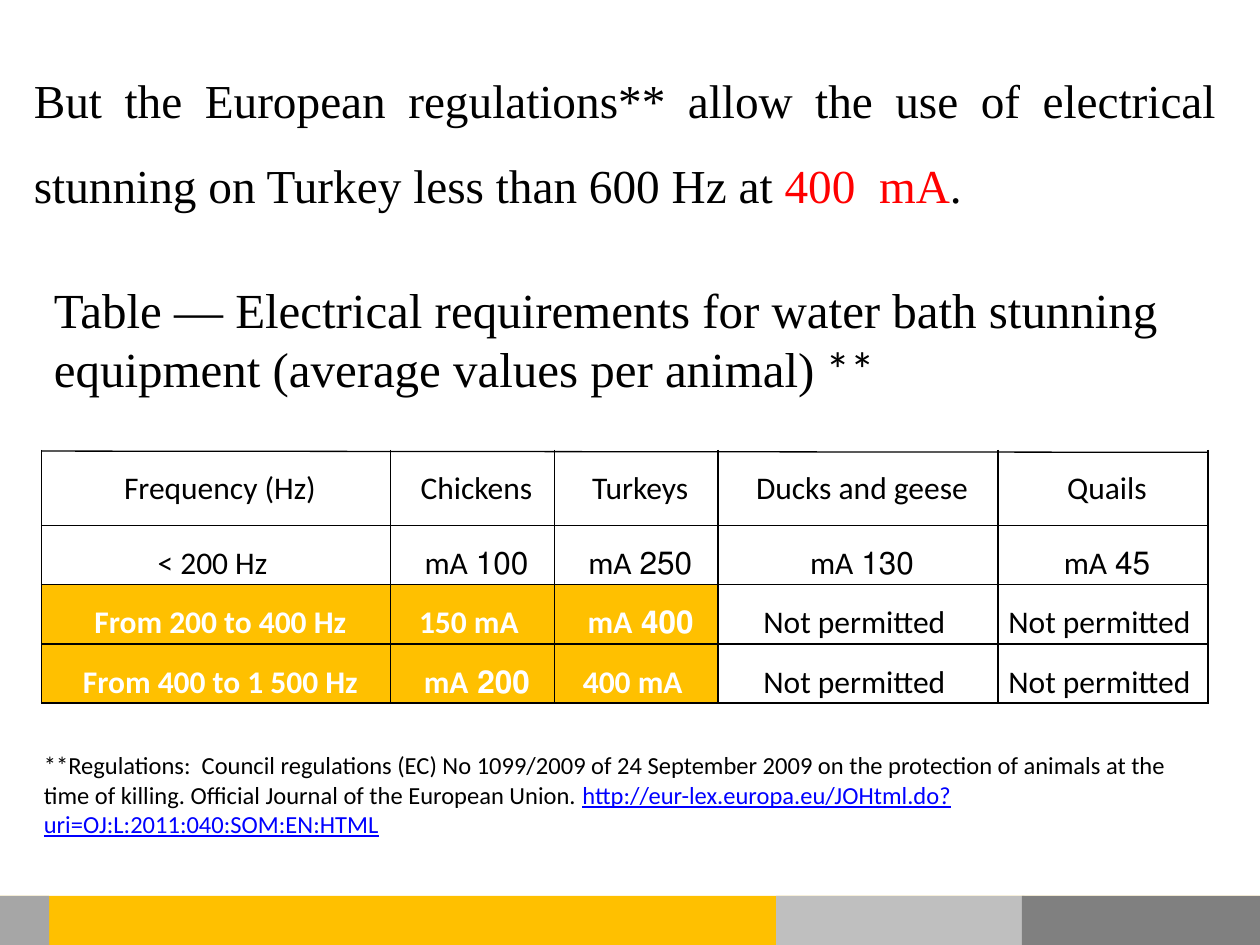
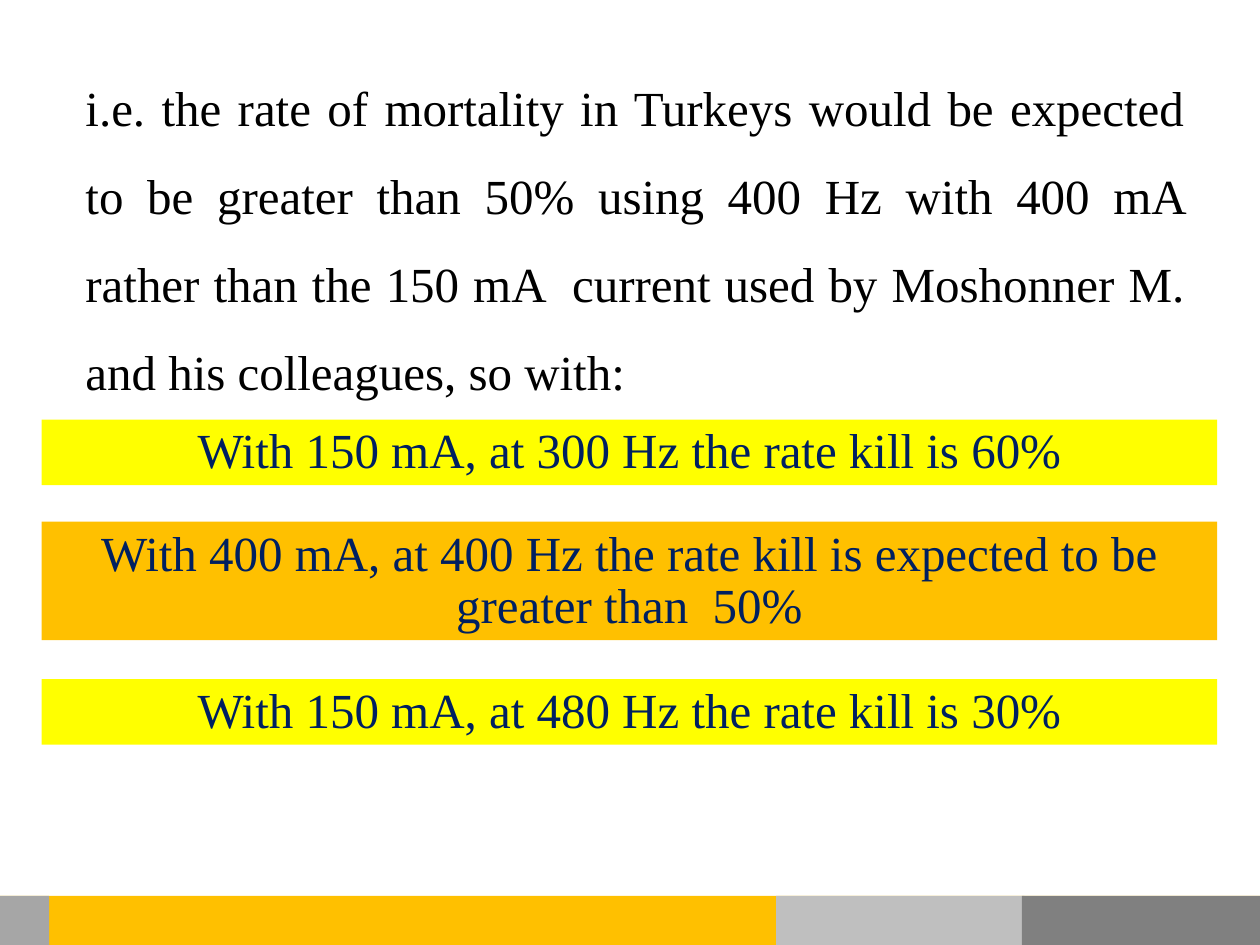
from pptx import Presentation
from pptx import util as u
from pptx.dml.color import RGBColor
from pptx.enum import shapes, text
from pptx.oxml import parse_xml
from pptx.oxml.ns import nsdecls

BLACK = RGBColor(0, 0, 0)
WHITE = RGBColor(255, 255, 255)
RED = RGBColor(255, 0, 0)
BLUE = RGBColor(0, 0, 255)
NAVY = RGBColor(0, 0x20, 0x60)
GOLD = RGBColor(255, 0xC0, 0)
YELLOW = RGBColor(255, 255, 0)
SILVER = RGBColor(0xBF, 0xBF, 0xBF)
GREY = RGBColor(0x80, 0x80, 0x80)
ASH = RGBColor(0xA6, 0xA6, 0xA6)
SERIF, SANS = "Times New Roman", "Calibri"
MID, JUST = text.PP_ALIGN.CENTER, text.PP_ALIGN.JUSTIFY

FOOT = [(0, 10.04, GOLD), (6.16, 1.97, SILVER), (8.11, 1.97, GREY), (0, 0.39, ASH)]

RULE = [
    ("But the European regulations** allow the use of electrical stunning on Turkey less than 600 Hz at ", {}),
    ("400  mA", {"color": RED}),
    (".", {}),
]
TITLE = [
    ("Table — Electrical requirements for water bath stunning equipment (average values per animal)", {}),
    (" **", {"name": SANS}),
]
NOTE = [
    ("**Regulations:  Council regulations (EC) No 1099/2009 of 24 September 2009 on the protection of "
     "animals at the time of killing. Official Journal of the European Union. ", {}),
    ("http://eur-lex.europa.eu/JOHtml.do?uri=OJ:L:2011:040:SOM:EN:HTML", {"color": BLUE, "underline": True}),
    (" ", {}),
]
COLS = [2.77, 1.3, 1.3, 2.22, 1.67]
ROWS = [0.6, 0.47, 0.47, 0.47]
GRID = [
    ["Frequency (Hz) ", "Chickens ", "Turkeys ", "Ducks and geese ", "Quails "],
    ["< 200 Hz ", "100 mA ", "250 mA ", "130 mA ", "45 mA "],
    ["From 200 to 400 Hz ", "150 mA ", "400 mA ", "Not permitted ", "Not permitted "],
    ["From 400 to 1 500 Hz ", "200 mA ", "400 mA ", "Not permitted ", "Not permitted "],
]
LTR = {(1, 0), (2, 1), (3, 2)} | {(r, c) for r in (2, 3) for c in (3, 4)}

LEAD = [("i.e. the rate of mortality in Turkeys would be expected to be greater than 50% using 400 Hz "
         "with 400 mA rather than the 150 mA  current used by Moshonner M. and his colleagues, so with:", {})]
RATES = [
    (3.33, 0.52, YELLOW, "With 150 mA, at 300 Hz the rate kill is 60%"),
    (4.14, 0.94, GOLD, "With 400 mA, at 400 Hz the rate kill is expected to be greater than  50%"),
    (5.39, 0.52, YELLOW, "With 150 mA, at 480 Hz the rate kill is 30%"),
]


def write(frame, runs, size, name=SERIF, color=BLACK, bold=False, rtl=False, **form):
    frame.word_wrap = True
    para = frame.paragraphs[0]
    for key, val in form.items():
        setattr(para, key, val)
    if rtl:
        para._p.get_or_add_pPr().set("rtl", "1")
    for words, diff in runs:
        run = para.add_run()
        run.text = words
        look = {"size": u.Pt(size), "name": name, "bold": bold, "color": color, **diff}
        run.font.color.rgb = look.pop("color")
        for key, val in look.items():
            setattr(run.font, key, val)


def note(slide, box, runs, size, **form):
    frame = slide.shapes.add_textbox(*map(u.Inches, box)).text_frame
    write(frame, runs, size, **form)
    return frame


def block(slide, box, fill):
    rect = slide.shapes.add_shape(shapes.MSO_SHAPE.RECTANGLE, *map(u.Inches, box))
    rect.shadow.inherit = False
    rect.fill.solid()
    rect.fill.fore_color.rgb = fill
    rect.line.fill.background()
    return rect


def foot(slide):
    for left, wide, fill in FOOT:
        block(slide, (left, 7.11, wide, 0.39), fill)


def edge(cell, sides):
    props = cell._tc.get_or_add_tcPr()
    for side in "LRTB":
        paint = '<a:solidFill><a:srgbClr val="000000"/></a:solidFill>' if side in sides else "<a:noFill/>"
        props.append(parse_xml(f'<a:ln{side} {nsdecls("a")} w="12700">{paint}</a:ln{side}>'))


def table(slide):
    box = map(u.Inches, (0.33, 3.57, sum(COLS), sum(ROWS)))
    tab = slide.shapes.add_table(len(ROWS), len(COLS), *box).table
    tab.first_row = tab.horz_banding = False
    for col, wide in zip(tab.columns, COLS):
        col.width = u.Inches(wide)
    for r, (row, high) in enumerate(zip(GRID, ROWS)):
        tab.rows[r].height = u.Inches(high)
        for c, words in enumerate(row):
            cell = tab.cell(r, c)
            hot = r > 1 and c < 3
            pads = {"margin_left": 0.07, "margin_right": 0.07, "margin_top": 0, "margin_bottom": 0}
            for key, val in pads.items():
                setattr(cell, key, u.Inches(val))
            edge(cell, "LRTB" if r else "LRB")
            if hot:
                cell.fill.solid()
                cell.fill.fore_color.rgb = GOLD
            else:
                cell.fill.background()
            write(cell.text_frame, [(words, {})], 18, SANS, WHITE if hot else BLACK, hot,
                  (r, c) not in LTR, alignment=MID, line_spacing=1.5)


def rules(slide):
    note(slide, (0.17, 0.29, 9.58, 1.38), RULE, 27, alignment=JUST, line_spacing=1.5)
    table(slide)
    frame = note(slide, (0.25, 5.9, 9.33, 0.81), NOTE, 14, name=SANS)
    frame.vertical_anchor = text.MSO_ANCHOR.MIDDLE
    ends = map(u.Inches, (0.33, 3.58, 9.58, 3.59))
    line = slide.shapes.add_connector(shapes.MSO_CONNECTOR.STRAIGHT, *ends)
    line.line.color.rgb = BLACK
    line.line.width = u.Pt(0.75)
    line._element.spPr.append(parse_xml(f'<a:effectLst {nsdecls("a")}/>'))
    note(slide, (0.33, 2.17, 9.33, 1.04), TITLE, 28)


def rates(slide):
    for top, high, fill, words in RATES:
        rect = block(slide, (0.33, top, 9.33, high), fill)
        write(rect.text_frame, [(words, {})], 28, color=NAVY, rtl=True,
              alignment=MID, line_spacing=u.Pt(30))
    note(slide, (0.58, 0.33, 8.92, 2.93), LEAD, 28, alignment=JUST, line_spacing=1.5)


def main():
    deck = Presentation()
    deck.slide_width, deck.slide_height = u.Inches(10), u.Inches(7.5)
    for fill in (rules, rates):
        slide = deck.slides.add_slide(deck.slide_layouts[6])
        fill(slide)
        foot(slide)
    deck.save("out.pptx")


if __name__ == "__main__":
    main()
